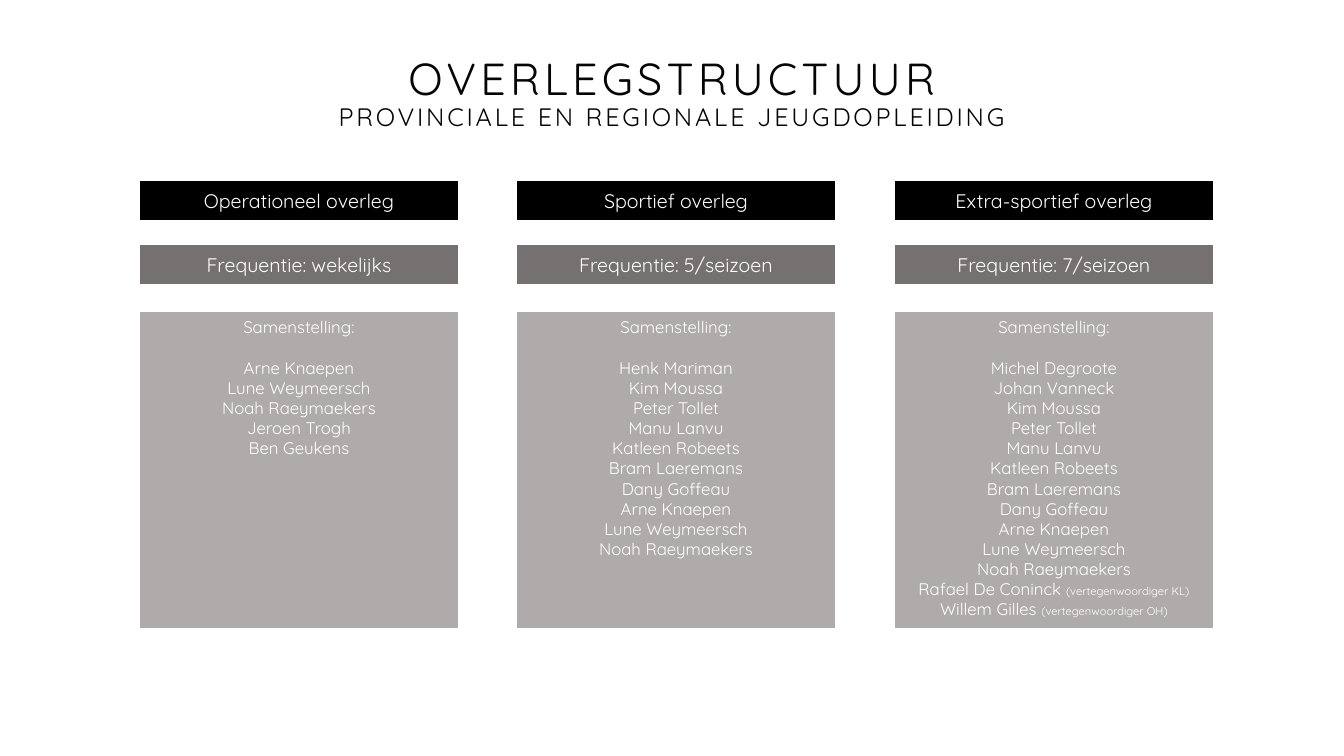
from pptx import Presentation
from pptx.dml.color import RGBColor
from pptx.enum.shapes import MSO_SHAPE
from pptx.enum.text import MSO_ANCHOR, MSO_AUTO_SIZE, PP_ALIGN
from pptx.util import Pt

RECTANGLE = MSO_SHAPE.RECTANGLE
TOP, MIDDLE, BOTTOM = MSO_ANCHOR.TOP, MSO_ANCHOR.MIDDLE, MSO_ANCHOR.BOTTOM
CENTER, NO_FIT = PP_ALIGN.CENTER, MSO_AUTO_SIZE.NONE

PX = 914400 / 100.8
THEME = {
    "font": "Quicksand",
    "ink": "050505", "light": "FFFFFF",
    "name_fill": "000000", "frequency_fill": "767171", "members_fill": "AFABAB",
    "title": 32, "subtitle": 18, "heading": 14, "member": 12, "note": 8,
    "list_gap": 14.4,
}


def place(shape, left, top, width, height):
    box = {"left": left, "top": top, "width": width, "height": height}
    for name, value in box.items():
        setattr(shape, name, round(value * PX))


def write(shape, lines, size, color, anchor):
    """Each line is a list of (text, type size) spans, or a plain string."""
    frame = shape.text_frame
    for name, value in {"word_wrap": True, "auto_size": NO_FIT,
                        "vertical_anchor": anchor}.items():
        setattr(frame, name, value)
    for number, line in enumerate(lines):
        para = frame.add_paragraph() if number else frame.paragraphs[0]
        para.alignment = CENTER
        para.space_before = Pt(0)
        for text, span_size in [(line, size)] if isinstance(line, str) else line:
            span = para.add_run()
            span.text = text
            span.font.color.rgb = RGBColor.from_string(color)
            for name, value in {"name": THEME["font"], "size": Pt(span_size),
                                "bold": False}.items():
                setattr(span.font, name, value)
    return frame.paragraphs


deck = Presentation()
deck.slide_width, deck.slide_height = round(1344 * PX), round(756 * PX)
page = deck.slides.add_slide(deck.slide_layouts[0])

# Title and subtitle: placeholder, text, size key, top, height, anchor, tracking
headings = [
    (page.shapes.title, "OVERLEGSTRUCTUUR", "title", 55, 54, BOTTOM, 300),
    (page.placeholders[1], "PROVINCIALE EN REGIONALE JEUGDOPLEIDING",
     "subtitle", 102, 40, TOP, 200),
]
for holder, text, size, top, height, anchor, tracking in headings:
    place(holder, 0, top, 1344, height)
    para = write(holder, [text], THEME[size], THEME["ink"], anchor)[0]
    para.line_spacing = 0.8
    para.runs[0].font._element.set("spc", str(tracking))

# Meetings: name, frequency, members
shared = ["Kim Moussa", "Peter Tollet", "Manu Lanvu", "Katleen Robeets",
          "Bram Laeremans", "Dany Goffeau"]
staff = ["Arne Knaepen", "Lune Weymeersch", "Noah Raeymaekers"]
delegates = [
    [(name + " ", THEME["member"]), (f"(vertegenwoordiger {club})", THEME["note"])]
    for name, club in [("Rafael De Coninck", "KL"), ("Willem Gilles", "OH")]
]
meetings = [
    ("Operationeel overleg", "wekelijks", staff + ["Jeroen Trogh", "Ben Geukens"]),
    ("Sportief overleg", "5/seizoen", ["Henk Mariman"] + shared + staff),
    ("Extra-sportief overleg", "7/seizoen",
     ["Michel Degroote", "Johan Vanneck"] + shared + staff + delegates),
]

# One column of three boxes per meeting
for column, (name, frequency, members) in enumerate(meetings):
    left = 140 + column * 755 // 2
    boxes = [
        (181, 39, "name_fill", [name], "heading", MIDDLE),
        (245, 39, "frequency_fill", [f"Frequentie: {frequency}"], "heading", MIDDLE),
        (312, 316, "members_fill", ["Samenstelling:"] + members, "member", TOP),
    ]
    for top, height, fill, lines, size, anchor in boxes:
        box = page.shapes.add_shape(RECTANGLE, 0, 0, 0, 0)
        place(box, left, top, 318, height)
        box.shadow.inherit = False
        box.fill.solid()
        box.fill.fore_color.rgb = RGBColor.from_string(THEME[fill])
        box.line.fill.background()
        paras = write(box, lines, THEME[size], THEME["light"], anchor)
        if len(paras) > 1:
            paras[0].space_after = Pt(THEME["list_gap"])

deck.save("out.pptx")
